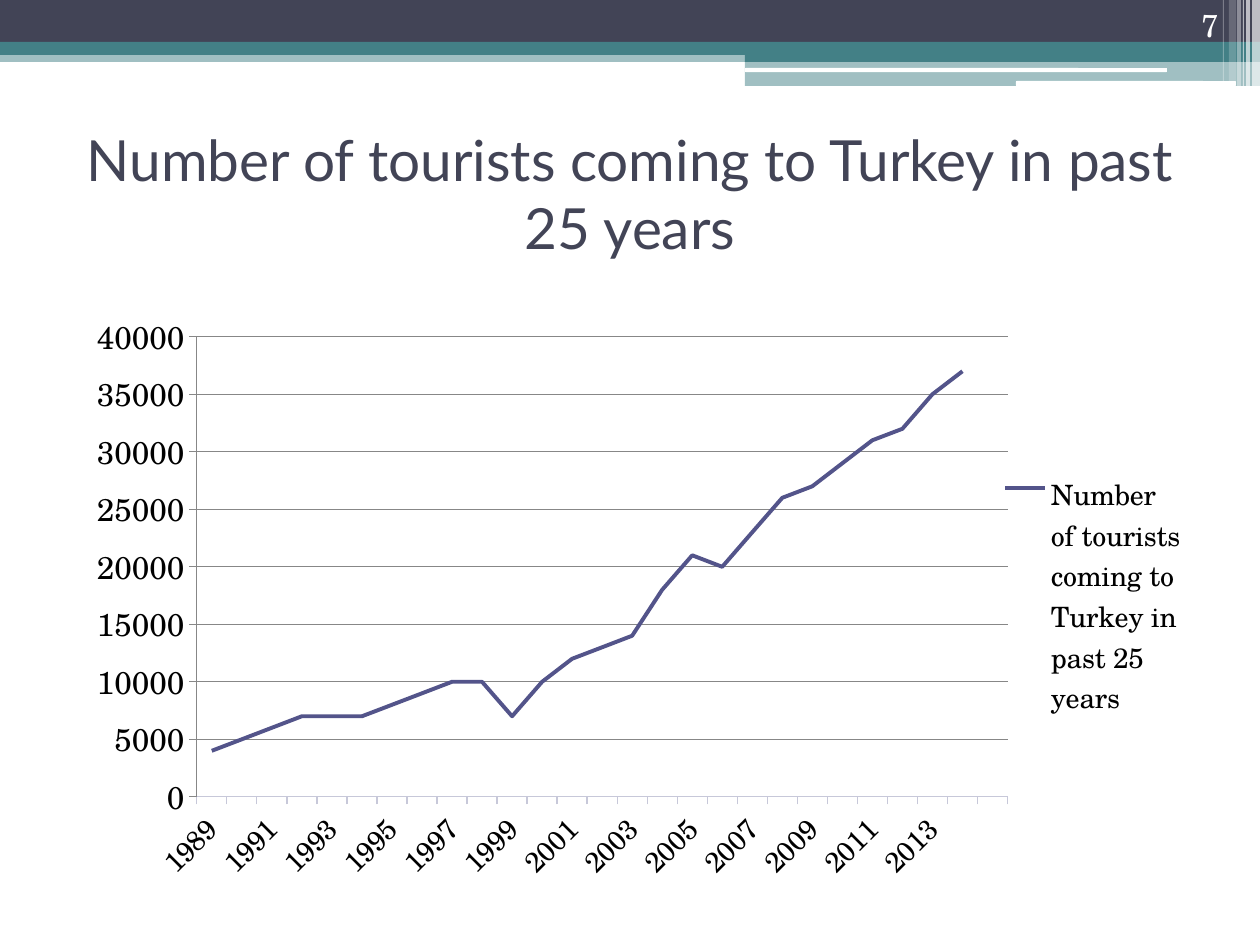
from dataclasses import dataclass

from lxml.etree import SubElement
from pptx import Presentation
from pptx.chart.data import CategoryChartData
from pptx.dml.color import RGBColor
from pptx.enum.chart import XL_CHART_TYPE, XL_LEGEND_POSITION, XL_TICK_MARK
from pptx.enum.shapes import MSO_SHAPE
from pptx.enum.text import MSO_ANCHOR, PP_ALIGN
from pptx.oxml import parse_xml
from pptx.oxml.ns import nsdecls, qn
from pptx.util import Pt

EMU_PER_PX = 914400 / 126


@dataclass(frozen=True)
class Theme:
    navy: str = "424456"
    teal: str = "438086"
    white: str = "FFFFFF"
    black: str = "000000"
    series: str = "53548A"
    axis: str = "C7C8D9"
    grid: str = "878787"
    heading_font: str = "Lato"
    body_font: str = "TeX Gyre Schola"
    title_size: float = 32.4
    body_size: int = 18
    small_size: int = 16


THEME = Theme()

# Content
TITLE = "Number of tourists coming to Turkey in past 25 years"
PAGE_NUMBER = "7"
FIRST_YEAR = 1989
TOURISTS = [
    4000, 5000, 6000, 7000, 7000, 7000, 8000, 9000, 10000, 10000, 7000, 10000, 12000,
    13000, 14000, 18000, 21000, 20000, 23000, 26000, 27000, 29000, 31000, 32000,
    35000, 37000,
]

# Header bands: left, top, width, height, colour, opacity in percent
BANDS = [
    (0, 50, 1260, 12, THEME.teal, 50),
    (0, 0, 1260, 43, THEME.navy, 100),
    (0, 42, 1260, 13, THEME.teal, 100),
    (745, 49, 515, 13, THEME.teal, 100),
    (745, 61, 515, 25, THEME.teal, 50),
]
ROUNDED_BARS = [
    (745, 68, 422, 4, THEME.white, 100),
    (1016, 81, 220, 5, THEME.white, 100),
]
# Stripes at the right edge: left, width, height, opacity in percent
STRIPES = [
    (1252, 8, 86, 65), (1246, 4, 86, 65), (1243, 1, 86, 60),
    (1237, 4, 86, 40), (1229, 7, 81, 20), (1223, 1, 81, 30),
]
TITLE_BOX = (63, 119, 1134, 147)
CHART_BOX = (63, 310, 1134, 596)
NUMBER_BOX = (1126, 0, 105, 50)
# Fractions of the chart: left, top, width, height
PLOT_AREA = (0.118, 0.045, 0.715, 0.772)
LEGEND_AREA = (0.83, 0.27, 0.16, 0.42)


def px(*lengths):
    return [round(length * EMU_PER_PX) for length in lengths]


def color(value):
    return RGBColor.from_string(value)


def set_font(font, name, size, value):
    font.name = name
    font.size = Pt(size)
    font.color.rgb = color(value)


def add_bar(slide, kind, box, fill, opacity):
    shape = slide.shapes.add_shape(kind, *px(*box))
    shape.shadow.inherit = False
    shape.line.fill.background()
    shape.fill.solid()
    shape.fill.fore_color.rgb = color(fill)
    if opacity < 100:
        fill_color = shape.fill._xPr.find(".//" + qn("a:srgbClr"))
        SubElement(fill_color, qn("a:alpha"), val=str(opacity * 1000))


def add_header(slide):
    for kind, bars in ((MSO_SHAPE.RECTANGLE, BANDS), (MSO_SHAPE.ROUNDED_RECTANGLE, ROUNDED_BARS)):
        for *box, fill, opacity in bars:
            add_bar(slide, kind, box, fill, opacity)
    for left, width, height, opacity in STRIPES:
        add_bar(slide, MSO_SHAPE.RECTANGLE, (left, 0, width, height), THEME.white, opacity)


def write_text(shape, text, alignment, anchor, font):
    frame = shape.text_frame
    frame.word_wrap = True
    frame.vertical_anchor = anchor
    frame.text = text
    paragraph = frame.paragraphs[0]
    paragraph.alignment = alignment
    set_font(paragraph.font, *font)


def add_title(slide):
    title = slide.shapes.title
    title.left, title.top, title.width, title.height = px(*TITLE_BOX)
    write_text(title, TITLE, PP_ALIGN.CENTER, MSO_ANCHOR.MIDDLE,
               (THEME.heading_font, THEME.title_size, THEME.navy))


def place_part(part, area, index, target=""):
    """Give a chart part a fixed place, as the child at the given index."""
    for layout in part.findall(qn("c:layout")):
        part.remove(layout)
    sizes = "".join(f'<c:{key} val="{value}"/>' for key, value in zip("xywh", area))
    part.insert(index, parse_xml(
        f'<c:layout {nsdecls("c")}><c:manualLayout>{target}'
        f'<c:xMode val="edge"/><c:yMode val="edge"/>{sizes}</c:manualLayout></c:layout>'))


def add_chart(slide):
    data = CategoryChartData()
    # One empty category closes the axis
    data.categories = [str(FIRST_YEAR + index) for index in range(len(TOURISTS))] + [""]
    data.add_series(TITLE, TOURISTS + [None])
    chart = slide.shapes.add_chart(XL_CHART_TYPE.LINE, *px(*CHART_BOX), data).chart
    set_font(chart.font, THEME.body_font, THEME.body_size, THEME.black)
    chart.has_title = False
    place_part(chart._chartSpace.chart.plotArea, PLOT_AREA, 0, '<c:layoutTarget val="inner"/>')

    # Legend
    chart.has_legend = True
    chart.legend.position = XL_LEGEND_POSITION.RIGHT
    chart.legend.include_in_layout = False
    set_font(chart.legend.font, THEME.body_font, THEME.small_size, THEME.black)
    place_part(chart.legend._element, LEGEND_AREA, 1)

    # Axes
    years, counts = chart.category_axis, chart.value_axis
    counts.minimum_scale, counts.maximum_scale, counts.major_unit = 0, 40000, 5000
    counts.has_major_gridlines = True
    set_font(years.tick_labels.font, THEME.body_font, THEME.small_size, THEME.black)
    for axis in (years, counts):
        axis.major_tick_mark = XL_TICK_MARK.OUTSIDE
    for line, value in ((years.format.line, THEME.axis), (counts.format.line, THEME.grid),
                        (counts.major_gridlines.format.line, THEME.grid)):
        line.color.rgb = color(value)
        line.width = Pt(0.75)

    # Series
    chart.plots[0].vary_by_categories = False
    series = chart.plots[0].series[0]
    series.smooth = False
    series.format.line.color.rgb = color(THEME.series)
    series.format.line.width = Pt(2.25)


def main():
    presentation = Presentation()
    presentation.slide_width, presentation.slide_height = px(1260, 945)
    slide = presentation.slides.add_slide(presentation.slide_layouts[5])
    add_header(slide)
    add_title(slide)
    add_chart(slide)
    number = slide.shapes.add_textbox(*px(*NUMBER_BOX))
    write_text(number, PAGE_NUMBER, PP_ALIGN.RIGHT, MSO_ANCHOR.BOTTOM,
               (THEME.body_font, THEME.body_size, THEME.white))
    presentation.save("out.pptx")


if __name__ == "__main__":
    main()
